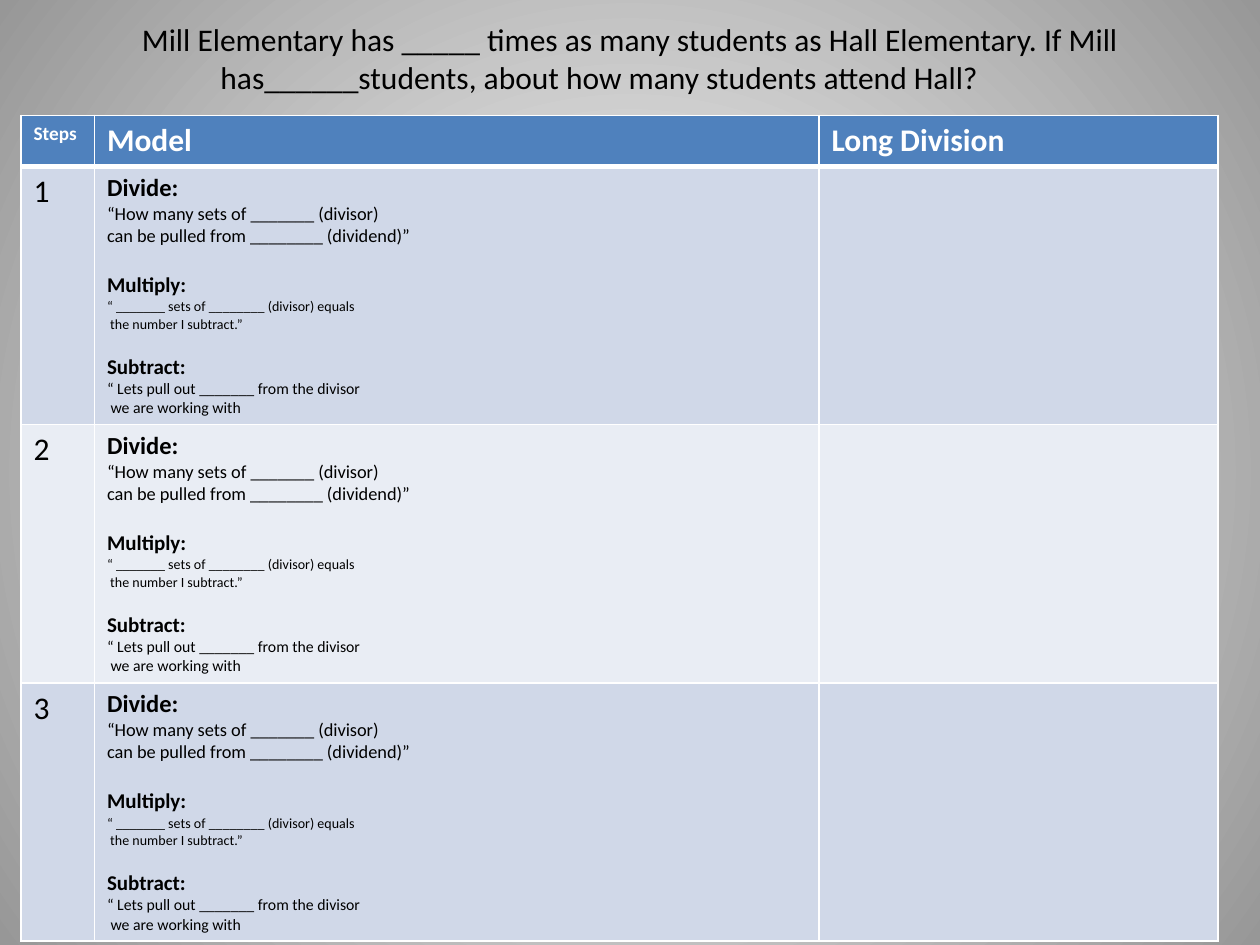
from dataclasses import dataclass

from lxml.etree import SubElement
from pptx import Presentation
from pptx.dml.color import RGBColor
from pptx.enum.text import MSO_ANCHOR, PP_ALIGN
from pptx.oxml.ns import qn
from pptx.util import Pt


@dataclass(frozen=True)
class Theme:
    font: str = "Calibri"
    white: str = "FFFFFF"
    black: str = "000000"
    background_edge: str = "979797"
    header: str = "4F81BD"
    bands: tuple = ("D0D8E8", "E9EDF4")
    large: float = 18
    divide: float = 14
    heading: float = 12
    steps: float = 11
    divide_prompt: float = 10.5
    multiply_prompt: float = 8
    subtract_prompt: float = 9


theme = Theme()


def write(paragraph, text, size=theme.large, bold=False, color=theme.black,
          align=PP_ALIGN.LEFT, space_before=0):
    paragraph.alignment = align
    paragraph.space_before = Pt(space_before)
    run = paragraph.add_run()
    run.text = text
    run.font.name = theme.font
    run.font.size = Pt(size)
    run.font.bold = bold
    run.font.color.rgb = RGBColor.from_string(color)


def style_cell(cell, fill, top=1, bottom=1):
    """Give the cell a solid fill and white borders of the given widths."""
    properties = cell._tc.get_or_add_tcPr()
    for side, width in (("L", 1), ("R", 1), ("T", top), ("B", bottom)):
        line = SubElement(properties, qn(f"a:ln{side}"), w=str(Pt(width)))
        SubElement(SubElement(line, qn("a:solidFill")), qn("a:srgbClr"), val=theme.white)
    cell.fill.solid()
    cell.fill.fore_color.rgb = RGBColor.from_string(fill)


presentation = Presentation()
presentation.slide_width = Pt(720)
presentation.slide_height = Pt(540)
slide = presentation.slides.add_slide(presentation.slide_layouts[6])

# Background: circular gradient, light in the centre
background = slide.background.fill
background.gradient()
for stop, color in zip(background.gradient_stops, (theme.white, theme.background_edge)):
    stop.color.rgb = RGBColor.from_string(color)
gradient = slide.element.find(".//" + qn("a:gradFill"))
gradient.remove(gradient.find(qn("a:lin")))
circle = SubElement(gradient, qn("a:path"), path="circle")
SubElement(circle, qn("a:fillToRect"), l="50000", t="50000", r="50000", b="50000")

# Table
header_height, step_height = 29.2, 147.5
step_count = 3
columns = (("Steps", 42, theme.steps), ("Model", 414, theme.large),
           ("Long Division", 228, theme.large))
table = slide.shapes.add_table(
    step_count + 1, len(columns), Pt(12), Pt(66), Pt(684),
    Pt(header_height + step_count * step_height)).table

table.rows[0].height = Pt(header_height)
for index, (title, width, size) in enumerate(columns):
    table.columns[index].width = Pt(width)
    cell = table.cell(0, index)
    style_cell(cell, theme.header, bottom=3)
    write(cell.text_frame.paragraphs[0], title, size=size, bold=True, color=theme.white)

# Heading, its size, the gap above it, its prompt lines and their size
operations = (
    ("Divide:", theme.divide, 0,
     ("“How many sets of _______ (divisor)", "can be pulled from ________ (dividend)”"),
     theme.divide_prompt),
    ("Multiply:", theme.heading, 14.6,
     ("“ _______ sets of ________ (divisor) equals", " the number I subtract.”"),
     theme.multiply_prompt),
    ("Subtract:", theme.heading, 12.2,
     ("“ Lets pull out _______ from the divisor", " we are working with"),
     theme.subtract_prompt),
)
for step in range(1, step_count + 1):
    table.rows[step].height = Pt(step_height)
    for cell in table.rows[step].cells:
        style_cell(cell, theme.bands[(step - 1) % 2], top=3 if step == 1 else 1)
    write(table.cell(step, 0).text_frame.paragraphs[0], str(step))

    model = table.cell(step, 1).text_frame
    paragraph = model.paragraphs[0]
    for heading, heading_size, gap, prompts, prompt_size in operations:
        if gap:
            paragraph = model.add_paragraph()
        write(paragraph, heading, size=heading_size, bold=True, space_before=gap)
        for prompt in prompts:
            write(model.add_paragraph(), prompt, size=prompt_size)

# Word problem; the closing tab shifts the second line to the left
problem = slide.shapes.add_textbox(Pt(36), Pt(-22), Pt(648), Pt(90)).text_frame
problem.word_wrap = True
problem.vertical_anchor = MSO_ANCHOR.TOP
problem.margin_top = Pt(33.5)
write(problem.paragraphs[0],
      "Mill Elementary has _____ times as many students as Hall Elementary. If Mill "
      "has______students, about how many students attend Hall? \t",
      align=PP_ALIGN.CENTER)

presentation.save("out.pptx")
